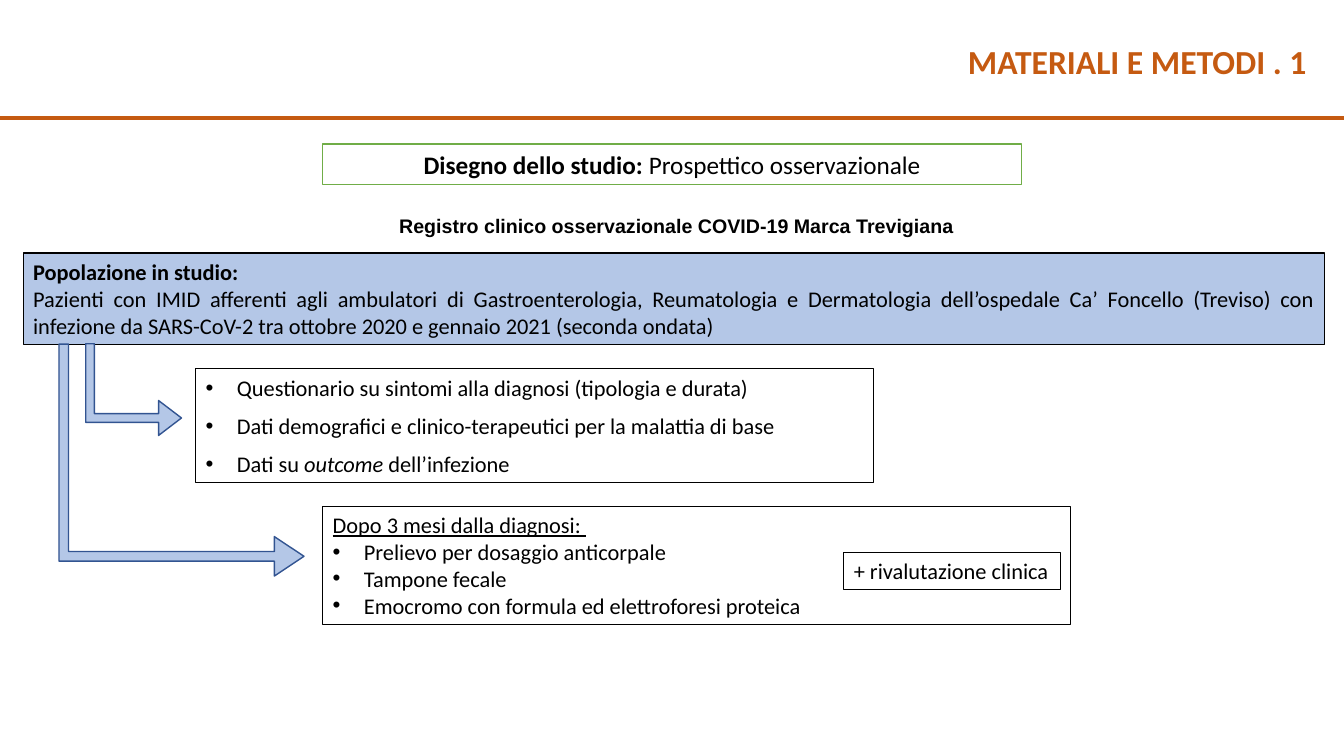
from dataclasses import dataclass

from lxml import etree
from pptx import Presentation
from pptx.dml.color import RGBColor
from pptx.enum.shapes import MSO_CONNECTOR, MSO_SHAPE
from pptx.enum.text import MSO_ANCHOR, MSO_AUTO_SIZE, PP_ALIGN
from pptx.oxml.ns import qn
from pptx.util import Inches, Pt

LEFT, CENTER, RIGHT, JUSTIFY = PP_ALIGN.LEFT, PP_ALIGN.CENTER, PP_ALIGN.RIGHT, PP_ALIGN.JUSTIFY
TOP = MSO_ANCHOR.TOP
FIT_SHAPE, FIXED_SIZE = MSO_AUTO_SIZE.SHAPE_TO_FIT_TEXT, MSO_AUTO_SIZE.NONE
RECTANGLE, BENT_ARROW = MSO_SHAPE.RECTANGLE, MSO_SHAPE.BENT_UP_ARROW
STRAIGHT = MSO_CONNECTOR.STRAIGHT
TWO_CONTENT = 3
BULLET_INDENT = 0.31


@dataclass(frozen=True)
class Theme:
    accent: RGBColor = RGBColor(0xC5, 0x5A, 0x11)
    text: RGBColor = RGBColor(0, 0, 0)
    white: RGBColor = RGBColor(0xFF, 0xFF, 0xFF)
    panel: RGBColor = RGBColor(0xB4, 0xC7, 0xE7)
    arrow_line: RGBColor = RGBColor(0x32, 0x54, 0x91)
    design_line: RGBColor = RGBColor(0x70, 0xAD, 0x47)
    font: str = "Calibri"
    registry_font: str = "Arial"
    title_size: int = 24
    design_size: int = 18
    body_size: int = 16
    registry_size: int = 14


THEME = Theme()


def place(shape, left, top, width, height):
    shape.left, shape.top = Inches(left), Inches(top)
    shape.width, shape.height = Inches(width), Inches(height)


def style_outline(shape, color=THEME.text, width=0.75):
    shape.line.color.rgb = color
    shape.line.width = Pt(width)


def prepare_frame(shape, wrap=True, auto_size=FIT_SHAPE):
    frame = shape.text_frame
    frame.word_wrap = wrap
    frame.auto_size = auto_size
    frame.vertical_anchor = TOP
    return frame


def style_paragraph(paragraph, size=THEME.body_size, align=LEFT, spacing=0,
                    color=THEME.text, name=THEME.font):
    paragraph.alignment = align
    paragraph.line_spacing = 1.0
    paragraph.space_before = paragraph.space_after = Pt(spacing)
    font = paragraph.font
    font.name, font.size, font.color.rgb = name, Pt(size), color


def set_indent(paragraph, margin, indent):
    properties = paragraph._p.get_or_add_pPr()
    properties.set("marL", str(Inches(margin)))
    properties.set("indent", str(Inches(indent)))
    return properties


def add_box(slide, bounds, fill=None, line=THEME.text, line_width=0.75, wrap=True):
    box = slide.shapes.add_shape(RECTANGLE, *map(Inches, bounds))
    box.shadow.inherit = False
    if fill is None:
        box.fill.background()
    else:
        box.fill.solid()
        box.fill.fore_color.rgb = fill
    style_outline(box, line, line_width)
    return prepare_frame(box, wrap)


def add_bent_arrow(slide, bounds, adjustments):
    arrow = slide.shapes.add_shape(BENT_ARROW, *map(Inches, bounds))
    arrow.rotation = 90
    for index, value in enumerate(adjustments):
        arrow.adjustments[index] = value
    arrow.shadow.inherit = False
    arrow.fill.solid()
    arrow.fill.fore_color.rgb = THEME.panel
    style_outline(arrow, THEME.arrow_line, 1)


def add_title_rule(slide):
    rule = slide.shapes.add_connector(STRAIGHT, 0, Inches(1.17), Inches(13.33), Inches(1.17))
    style_outline(rule, THEME.accent, 3)
    etree.SubElement(rule._element.spPr, qn("a:effectLst"))


def fill_title(slide, text):
    title = slide.shapes.title
    place(title, 9.47, 0.36, 3.59, 0.5)
    paragraph = prepare_frame(title, wrap=False).paragraphs[0]
    paragraph.text = text
    style_paragraph(paragraph, THEME.title_size, RIGHT, color=THEME.accent)
    paragraph.font.bold = True


def fill_list(placeholder, bounds, items, heading=None, align=LEFT, spacing=0):
    place(placeholder, *bounds)
    style_outline(placeholder)
    frame = prepare_frame(placeholder, auto_size=FIXED_SIZE)
    paragraph = frame.paragraphs[0]
    if heading:
        paragraph.text = heading
        etree.SubElement(set_indent(paragraph, 0, 0), qn("a:buNone"))
        style_paragraph(paragraph)
        paragraph.font.underline = True
        paragraph = frame.add_paragraph()
    for index, runs in enumerate(items):
        if index:
            paragraph = frame.add_paragraph()
        for text, italic in runs:
            run = paragraph.add_run()
            run.text = text
            if italic:
                run.font.italic = True
        set_indent(paragraph, BULLET_INDENT, -BULLET_INDENT)
        style_paragraph(paragraph, align=align, spacing=spacing)


def add_study_design(slide):
    frame = add_box(slide, (3.2, 1.43, 6.93, 0.4), THEME.white, THEME.design_line, 1)
    paragraph = frame.paragraphs[0]
    label = paragraph.add_run()
    label.text = "Disegno dello studio: "
    label.font.bold = True
    paragraph.add_run().text = "Prospettico osservazionale"
    style_paragraph(paragraph, THEME.design_size, CENTER)


def add_registry(slide):
    textbox = slide.shapes.add_textbox(*map(Inches, (3.76, 1.84, 5.82, 0.5)))
    paragraph = prepare_frame(textbox, wrap=False).paragraphs[0]
    paragraph.text = "Registro clinico osservazionale COVID-19 Marca Trevigiana"
    set_indent(paragraph, 0.1, 0)
    style_paragraph(paragraph, THEME.registry_size, name=THEME.registry_font)
    paragraph.line_spacing = 2.0
    paragraph.font.bold = True


def add_population(slide):
    frame = add_box(slide, (0.23, 2.51, 12.91, 0.91), THEME.panel)
    heading, description = frame.paragraphs[0], frame.add_paragraph()
    heading.text = "Popolazione in studio:"
    description.text = (
        "Pazienti con IMID afferenti agli ambulatori di Gastroenterologia, Reumatologia e "
        "Dermatologia dell’ospedale Ca’ Foncello (Treviso) con infezione da SARS-CoV-2 "
        "tra ottobre 2020 e gennaio 2021 (seconda ondata)")
    for paragraph in (heading, description):
        style_paragraph(paragraph, align=JUSTIFY)
    heading.font.bold = True


def add_reassessment(slide):
    paragraph = add_box(slide, (8.37, 5.48, 2.15, 0.37), wrap=False).paragraphs[0]
    paragraph.text = "+ rivalutazione clinica"
    style_paragraph(paragraph)


def main():
    presentation = Presentation()
    presentation.slide_width, presentation.slide_height = Inches(13.33), Inches(7.5)
    slide = presentation.slides.add_slide(presentation.slide_layouts[TWO_CONTENT])
    add_title_rule(slide)
    fill_title(slide, "MATERIALI E METODI . 1")
    add_study_design(slide)
    add_registry(slide)
    add_population(slide)
    add_bent_arrow(slide, (0.87, 3.39, 0.91, 0.95), (0.095, 0.19, 0.25))
    add_bent_arrow(slide, (0.65, 3.35, 2.3, 2.43), (0.041, 0.085, 0.128))
    fill_list(slide.placeholders[1], (1.94, 3.66, 6.72, 1.13), [
        [("Questionario su sintomi alla diagnosi (tipologia e durata)", False)],
        [("Dati demografici e clinico-terapeutici per la malattia di base", False)],
        [("Dati su ", False), ("outcome", True), (" dell’infezione", False)],
    ], align=JUSTIFY, spacing=4)
    fill_list(slide.placeholders[2], (3.2, 5.02, 7.42, 1.18), [
        [("Prelievo per dosaggio anticorpale", False)],
        [("Tampone fecale", False)],
        [("Emocromo con formula ed elettroforesi proteica", False)],
    ], heading="Dopo 3 mesi dalla diagnosi: ")
    add_reassessment(slide)
    presentation.save("out.pptx")


if __name__ == "__main__":
    main()
